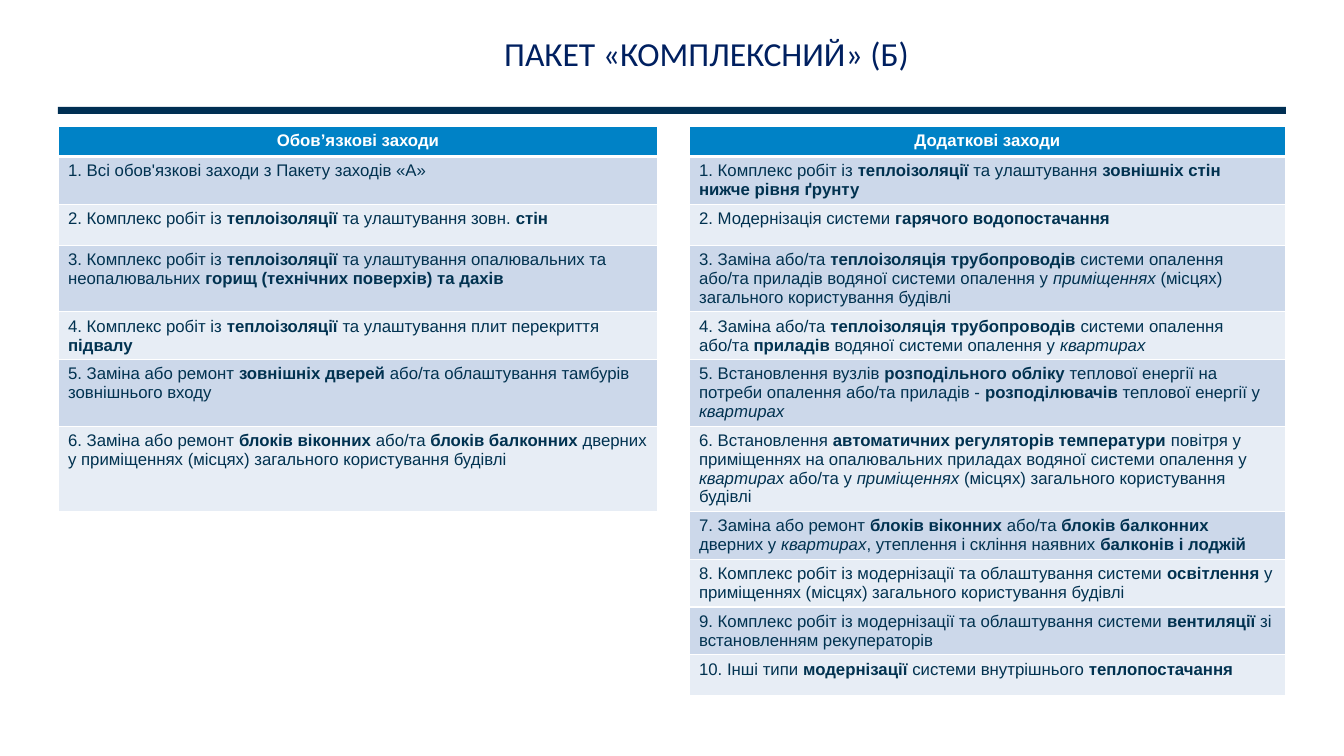
import pptx
import pptx.util
import pptx.dml.color
import pptx.enum.shapes
import pptx.enum.text
from lxml import etree
from pptx.oxml.ns import qn

# *bold* and _italic_ mark the emphasised words
TITLE = "ПАКЕТ «КОМПЛЕКСНИЙ» (Б)"
HEADERS = ("Обов’язкові заходи", "Додаткові заходи")
MANDATORY = [
    "1. Всі обов'язкові заходи з Пакету заходів «А»",
    "2. Комплекс робіт із *теплоізоляції* та улаштування зовн. *стін*",
    "3. Комплекс робіт із *теплоізоляції* та улаштування опалювальних та "
    "неопалювальних *горищ (технічних поверхів) та дахів*",
    "4. Комплекс робіт із *теплоізоляції* та улаштування плит перекриття *підвалу*",
    "5. Заміна або ремонт *зовнішніх дверей *або/та облаштування тамбурів "
    "зовнішнього входу",
    "6. Заміна або ремонт *блоків віконних *або/та *блоків балконних *дверних "
    "у приміщеннях (місцях) загального користування будівлі",
]
ADDITIONAL = [
    "1. Комплекс робіт із *теплоізоляції* та улаштування *зовнішніх стін "
    "нижче рівня ґрунту*",
    "2. Модернізація системи *гарячого водопостачання*",
    "3. Заміна або/та *теплоізоляція трубопроводів* системи опалення або/та "
    "приладів водяної системи опалення у _приміщеннях_ (місцях) загального "
    "користування будівлі",
    "4. Заміна або/та *теплоізоляція трубопроводів *системи опалення або/та "
    "*приладів* водяної системи опалення у _квартирах_",
    "5. Встановлення вузлів *розподільного обліку* теплової енергії на потреби "
    "опалення або/та приладів - *розподілювачів* теплової енергії у _квартирах_",
    "6. Встановлення *автоматичних регуляторів температури *повітря у "
    "приміщеннях на опалювальних приладах водяної системи опалення у "
    "_квартирах_ або/та у _приміщеннях_ (місцях) загального користування будівлі",
    "7. Заміна або ремонт *блоків віконних *або/та *блоків балконних* дверних "
    "у _квартирах_, утеплення і скління наявних *балконів і лоджій*",
    "8. Комплекс робіт із модернізації та облаштування системи *освітлення* "
    "у приміщеннях (місцях) загального користування будівлі",
    "9. Комплекс робіт із модернізації та облаштування системи *вентиляції* "
    "зі встановленням рекуператорів",
    "10. Інші типи *модернізації* системи внутрішнього *теплопостачання*",
]

COLORS = {"title": "002060", "rule": "002F53", "header": "0082C6", "text": "013250",
          "odd": "CCD8EA", "even": "E7EDF5", "white": "FFFFFF"}
LEFT, WIDTH = 58, 1228
TABLE_TOP, TABLE_HEIGHT = 126, 596
COLUMNS = (600, 31, 597)
HEADER_HEIGHT, ROW_HEIGHT = 30, 41


def px(n):
    return round(n * 914400 / 100.8)


def rgb(name):
    return pptx.dml.color.RGBColor.from_string(COLORS[name])


def add_run(p, text, font, size, color, bold=False, italic=False):
    r = p.add_run()
    r.text = text
    r.font.name, r.font.size = font, pptx.util.Pt(size)
    r.font.bold, r.font.italic = bold, italic
    r.font.color.rgb = rgb(color)


def add_marked_text(p, text):
    """Add a run for each plain, *bold* or _italic_ part."""
    for i, chunk in enumerate(text.split("*")):
        for j, part in enumerate(chunk.split("_")):
            if part:
                add_run(p, part, "Arial", 12, "text", i % 2 == 1, j % 2 == 1)


def set_borders(cell, bottom):
    tcPr = cell._tc.get_or_add_tcPr()
    for side, points in (("L", 1), ("R", 1), ("T", 1), ("B", bottom)):
        ln = etree.SubElement(tcPr, qn("a:ln" + side), w=str(pptx.util.Pt(points)))
        fill = etree.SubElement(ln, qn("a:solidFill"))
        etree.SubElement(fill, qn("a:srgbClr"), val=COLORS["white"])


def set_fill(cell, color):
    if color is None:
        cell.fill.background()
    else:
        cell.fill.solid()
        cell.fill.fore_color.rgb = rgb(color)


def add_title(s):
    tf = s.shapes.add_textbox(px(218), px(33), px(977), px(70)).text_frame
    tf.word_wrap = True
    p = tf.paragraphs[0]
    p.alignment = pptx.enum.text.PP_ALIGN.CENTER
    p.line_spacing = 0.9
    add_run(p, TITLE, "Calibri", 24, "title")


def add_rule(s):
    sp = s.shapes.add_shape(pptx.enum.shapes.MSO_SHAPE.RECTANGLE,
                            px(LEFT), px(107), px(WIDTH), px(7))
    sp.shadow.inherit = False
    sp.fill.solid()
    sp.fill.fore_color.rgb = rgb("rule")
    sp.line.fill.background()


def add_measures(s):
    count = len(ADDITIONAL)
    frame = s.shapes.add_table(count + 1, len(COLUMNS), px(LEFT), px(TABLE_TOP),
                               px(WIDTH), px(TABLE_HEIGHT))
    table = frame.table
    table.first_row = table.horz_banding = False
    for column, width in zip(table.columns, COLUMNS):
        column.width = px(width)
    for i, row in enumerate(table.rows):
        row.height = px(ROW_HEIGHT if i else HEADER_HEIGHT)
    frame.height = px(TABLE_HEIGHT)

    for c, measures in enumerate((MANDATORY, [], ADDITIONAL)):
        for i in range(count + 1):
            cell = table.cell(i, c)
            set_borders(cell, 1 if i else 3)
            p = cell.text_frame.paragraphs[0]
            color = "white" if c == 1 or i == count else None
            if i == 0 and measures:
                color = "header"
                p.alignment = pptx.enum.text.PP_ALIGN.CENTER
                add_run(p, HEADERS[c // 2], "Arial", 12, "white", bold=True)
            elif 0 < i <= len(measures):
                color = "odd" if i % 2 else "even"
                add_marked_text(p, measures[i - 1])
            else:
                etree.SubElement(p._p, qn("a:endParaRPr"), sz="1200")
            set_fill(cell, color)


def main():
    prs = pptx.Presentation()
    prs.slide_width, prs.slide_height = px(1344), px(756)
    s = prs.slides.add_slide(prs.slide_layouts[6])
    add_measures(s)
    add_title(s)
    add_rule(s)
    prs.save("out.pptx")


if __name__ == "__main__":
    main()
